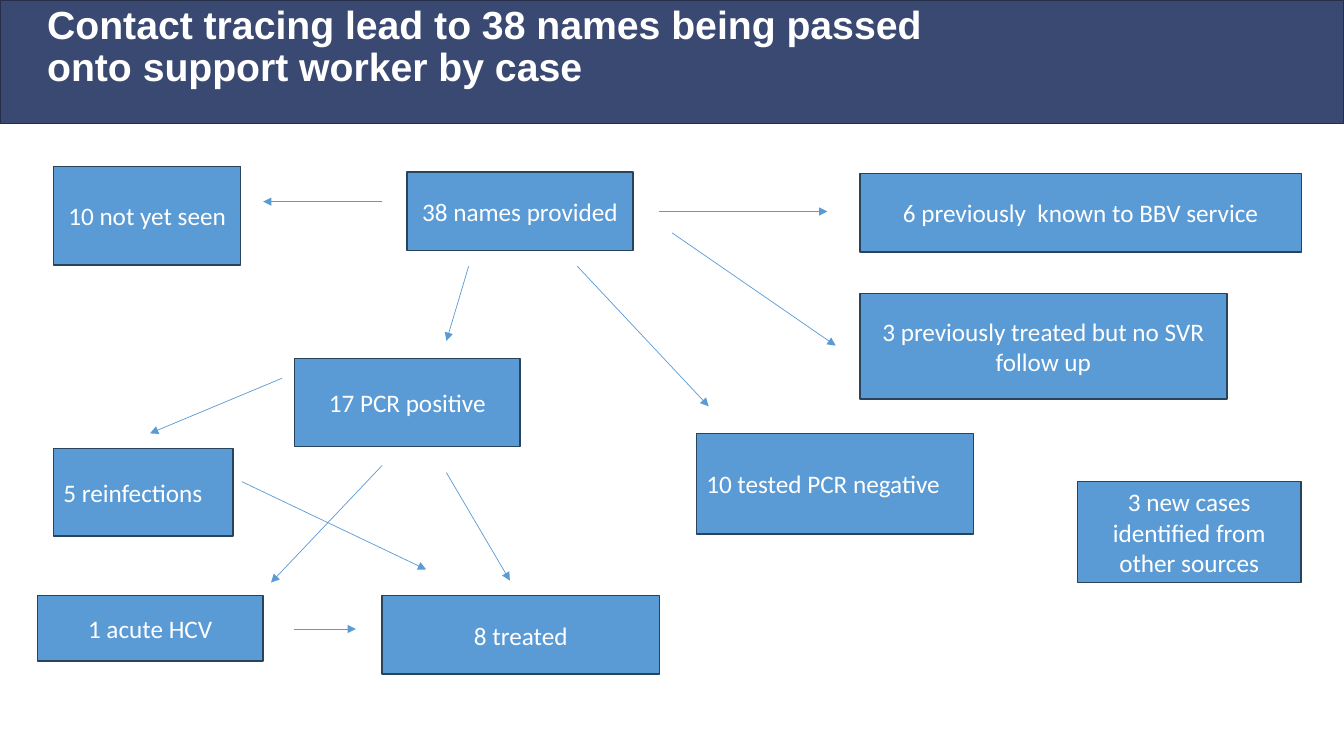
"""Build the contact tracing flow slide."""
from lxml import etree
from pptx import Presentation
from pptx.dml.color import RGBColor
from pptx.enum.shapes import MSO_CONNECTOR as CONN, MSO_SHAPE as SHAPE
from pptx.enum.text import MSO_ANCHOR as ANCHOR, PP_ALIGN as ALIGN
from pptx.oxml.ns import qn
from pptx.util import Cm, Pt

TITLE = "Contact tracing lead to 38 names being passed onto support worker by case"
TITLE_BOX = (0.94, 0.05, 22.99, 2.31)
BANNER = (0, 0, 33.87, 3.12)
TITLE_FONT = {"name": "Arial", "size": Pt(28), "bold": True}
BOX_FONT = {"name": "Calibri", "size": Pt(18)}

BOXES = [
    ("38 names provided", (10.26, 4.34, 5.69, 1.98), ALIGN.CENTER),
    ("6 previously  known to BBV service", (21.67, 4.37, 11.13, 1.98), ALIGN.CENTER),
    ("3 previously treated but no SVR follow up", (21.67, 7.39, 9.25, 2.67), ALIGN.CENTER),
    ("5 reinfections", (1.35, 11.3, 4.52, 2.21), ALIGN.LEFT),
    ("10 tested PCR negative", (17.55, 10.92, 6.99, 2.54), ALIGN.LEFT),
    ("1 acute HCV", (0.94, 15.01, 5.69, 1.65), ALIGN.CENTER),
    ("17 PCR positive", (7.42, 9.04, 5.69, 2.21), ALIGN.CENTER),
    ("8 treated", (9.63, 15.01, 6.99, 1.98), ALIGN.CENTER),
    ("3 new cases identified from other sources", (27.15, 12.14, 5.64, 2.54), ALIGN.CENTER),
    ("10 not yet seen", (1.35, 4.19, 4.72, 2.49), ALIGN.CENTER),
]
ARROWS = [
    (9.63, 5.08, 6.63, 5.08),
    (16.61, 5.33, 20.85, 5.33),
    (16.94, 5.87, 21.06, 8.71),
    (11.81, 6.71, 11.25, 8.59),
    (7.11, 9.53, 3.78, 10.92),
    (9.63, 11.73, 6.83, 14.68),
    (6.1, 12.14, 10.74, 14.35),
    (7.42, 15.85, 8.97, 15.85),
    (14.55, 6.71, 17.86, 10.24),
    (11.25, 11.91, 12.85, 14.63),
]


def color(fmt, value):
    fmt.rgb = RGBColor.from_string(value)


def add_rect(s, place, fill, line):
    sp = s.shapes.add_shape(SHAPE.RECTANGLE, *map(Cm, place))
    sp.shadow.inherit = False
    sp.fill.solid()
    color(sp.fill.fore_color, fill)
    color(sp.line.color, line)
    sp.line.width = Pt(1)
    return sp


def write(sp, text, font, align):
    tf = sp.text_frame
    tf.word_wrap = True
    tf.vertical_anchor = ANCHOR.MIDDLE
    p = tf.paragraphs[0]
    p.alignment = align
    r = p.add_run()
    r.text = text
    for key, value in font.items():
        setattr(r.font, key, value)
    color(r.font.color, "FFFFFF")
    return p


def add_arrow(s, ends):
    c = s.shapes.add_connector(CONN.STRAIGHT, *map(Cm, ends))
    color(c.line.color, "5B9BD5")
    c.line.width = Pt(0.5)
    etree.SubElement(c.line._get_or_add_ln(), qn("a:tailEnd"), type="triangle")
    etree.SubElement(c._element.spPr, qn("a:effectLst"))


def main():
    prs = Presentation()
    prs.slide_width, prs.slide_height = Cm(33.87), Cm(19.05)
    s = prs.slides.add_slide(prs.slide_layouts[6])
    add_rect(s, BANNER, "3A4972", "262E48")
    title = s.shapes.add_textbox(*map(Cm, TITLE_BOX))
    write(title, TITLE, TITLE_FONT, ALIGN.LEFT).line_spacing = 0.9
    for text, place, align in BOXES:
        write(add_rect(s, place, "5B9BD5", "28445D"), text, BOX_FONT, align)
    for ends in ARROWS:
        add_arrow(s, ends)
    prs.save("out.pptx")


if __name__ == "__main__":
    main()
